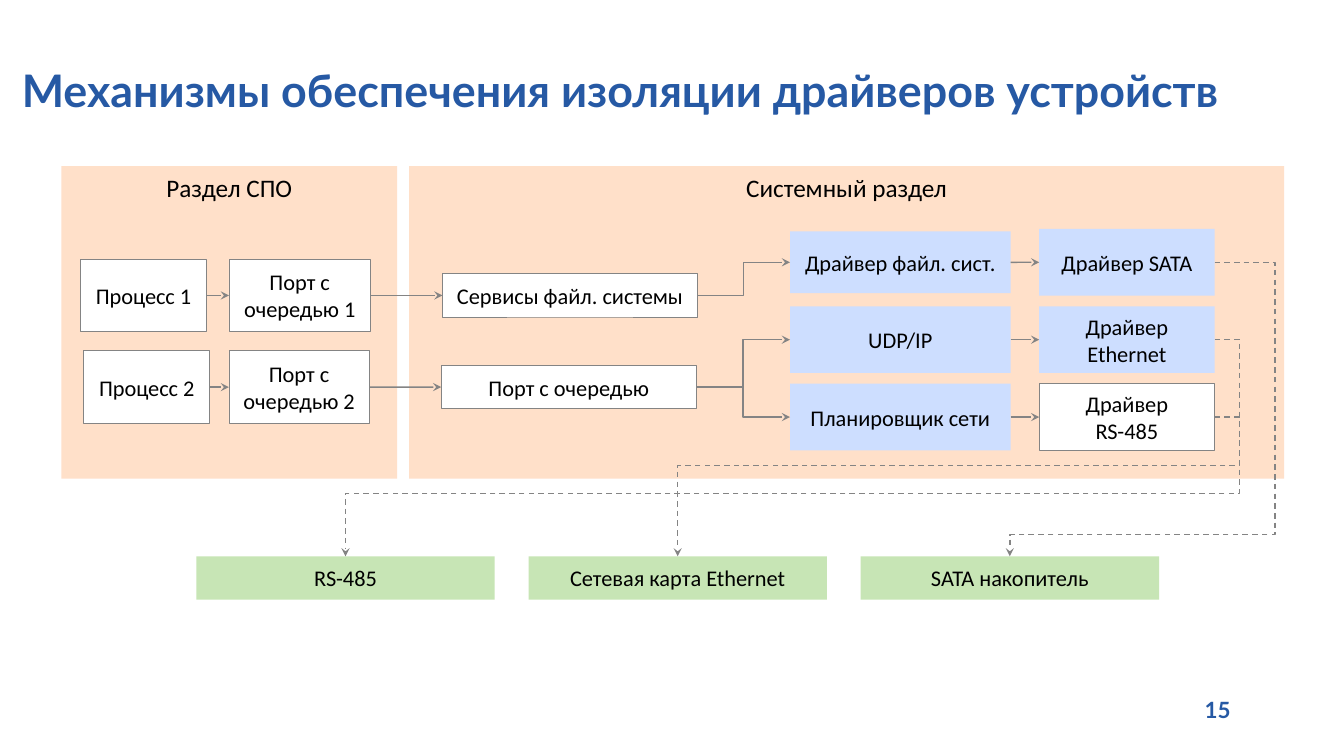
"""Build the slide on isolating device drivers between system partitions."""
from dataclasses import dataclass

import pptx
import pptx.dml.color
import pptx.enum.dml
import pptx.enum.shapes
import pptx.enum.text
import pptx.oxml
import pptx.oxml.ns
import pptx.util
from pptx.util import Cm

COLOURS = {
    "heading": "2659A4",
    "text": "000000",
    "partition": "FFCFAB",
    "plain": "FFFFFF",
    "driver": "CDDEFF",
    "device": "C7E5B5",
    "line": "848484",
}
ALIGN = pptx.enum.text.PP_ALIGN
ANCHOR = pptx.enum.text.MSO_ANCHOR
TOP, LEFT, BOTTOM, RIGHT = range(4)


@dataclass(frozen=True)
class Block:
    text: str
    left: float
    top: float
    width: float
    height: float
    role: str = "plain"


@dataclass(frozen=True)
class Link:
    source: str
    target: str
    bends: tuple[float, ...] = ()
    entry: int = LEFT
    dashed: bool = False


PARTITIONS = [
    Block("Раздел СПО", 1.55, 4.19, 8.46, 7.87, "partition"),
    Block("Системный раздел", 10.31, 4.19, 22.05, 7.87, "partition"),
]
PROCESS_ROWS = [6.53, 8.84]
DRIVER_ROWS = [5.77 + 1.95 * row for row in range(3)]
DEVICE_COLUMNS = [4.95 + 8.37 * column for column in range(3)]

BLOCKS = {
    "process1": Block("Процесс 1", 2.03, PROCESS_ROWS[0], 3.18, 1.83),
    "process2": Block("Процесс 2", 2.11, PROCESS_ROWS[1], 3.18, 1.83),
    "port1": Block("Порт с\nочередью 1", 5.77, PROCESS_ROWS[0], 3.57, 1.83),
    "port2": Block("Порт с\nочередью 2", 5.77, PROCESS_ROWS[1], 3.54, 1.83),
    "file_services": Block("Сервисы файл. системы", 11.15, PROCESS_ROWS[0] + 0.37, 6.43, 1.09),
    "queue_port": Block("Порт с очередью", 11.12, PROCESS_ROWS[1] + 0.37, 6.43, 1.09),
    "file_driver": Block("Драйвер файл. сист.", 19.91, 5.83, 5.56, 1.56, "driver"),
    "udp_ip": Block("UDP/IP", 19.91, DRIVER_ROWS[1], 5.56, 1.68, "driver"),
    "scheduler": Block("Планировщик сети", 19.91, DRIVER_ROWS[2], 5.56, 1.68, "driver"),
    "sata_driver": Block("Драйвер SATA", 26.19, DRIVER_ROWS[0], 4.42, 1.68, "driver"),
    "ethernet_driver": Block("Драйвер Ethernet", 26.19, DRIVER_ROWS[1], 4.42, 1.68, "driver"),
    "rs485_driver": Block("Драйвер\nRS-485", 26.19, DRIVER_ROWS[2], 4.42, 1.68),
    "rs485": Block("RS-485", DEVICE_COLUMNS[0], 14.02, 7.52, 1.09, "device"),
    "network_card": Block("Сетевая карта Ethernet", DEVICE_COLUMNS[1], 14.02, 7.52, 1.09, "device"),
    "sata_disk": Block("SATA накопитель", DEVICE_COLUMNS[2], 14.02, 7.52, 1.09, "device"),
}

LINKS = [
    Link("process1", "port1"),
    Link("process2", "port2"),
    Link("port1", "file_services"),
    Link("port2", "queue_port"),
    Link("file_services", "file_driver", (0.5,)),
    Link("queue_port", "udp_ip", (0.5,)),
    Link("queue_port", "scheduler", (0.5,)),
    Link("file_driver", "sata_driver"),
    Link("udp_ip", "ethernet_driver"),
    Link("scheduler", "rs485_driver"),
    Link("sata_driver", "sata_disk", (-0.295, 0.926), TOP, True),
    Link("ethernet_driver", "network_card", (-0.047, 0.58), TOP, True),
    Link("rs485_driver", "rs485", (-0.029, 0.547), TOP, True),
]


def colour(name: str) -> pptx.dml.color.RGBColor:
    """Return the named palette colour."""
    return pptx.dml.color.RGBColor.from_string(COLOURS[name])


def write(frame, text: str, size: float, font: str = "Calibri", ink: str = "text",
          align=ALIGN.CENTER, anchor=ANCHOR.MIDDLE, inset: float = 0.13):
    """Fill a text frame run by run and return its paragraph."""
    frame.word_wrap = True
    frame.vertical_anchor = anchor
    frame.margin_left = frame.margin_right = Cm(2 * inset)
    frame.margin_top = frame.margin_bottom = Cm(inset)
    paragraph = frame.paragraphs[0]
    paragraph.alignment = align
    for index, line in enumerate(text.split("\n")):
        if index:
            paragraph.add_line_break()
        run = paragraph.add_run()
        run.text = line
        run.font.name = font
        run.font.size = pptx.util.Pt(size)
        run.font.bold = ink == "heading"
        run.font.color.rgb = colour(ink)
    return paragraph


def draw_block(slide, block: Block):
    """Draw a labelled rectangle and return its shape."""
    shape = slide.shapes.add_shape(
        pptx.enum.shapes.MSO_SHAPE.RECTANGLE,
        Cm(block.left), Cm(block.top), Cm(block.width), Cm(block.height))
    shape.shadow.inherit = False
    shape.fill.solid()
    shape.fill.fore_color.rgb = colour(block.role)
    if block.role == "plain":
        shape.line.color.rgb = colour("line")
        shape.line.width = pptx.util.Pt(0.5)
    else:
        shape.line.fill.background()
    if block.role == "partition":
        tint = shape.fill._xPr.find(".//" + pptx.oxml.ns.qn("a:srgbClr"))
        pptx.oxml.ns.qn("a:alpha")
        add_child(tint, "alpha", val="64000")
        write(shape.text_frame, block.text, 18, anchor=ANCHOR.TOP, inset=0.15)
    else:
        write(shape.text_frame, block.text, 16)
    return shape


def add_child(parent, tag: str, **attributes: str) -> None:
    """Append a DrawingML element to its parent."""
    child = pptx.oxml.parse_xml(f"<a:{tag} {pptx.oxml.ns.nsdecls('a')}/>")
    for key, value in attributes.items():
        child.set(key, value)
    parent.append(child)


def draw_link(slide, link: Link, shapes: dict) -> None:
    """Draw an arrow glued to the two blocks it joins."""
    kinds = pptx.enum.shapes.MSO_CONNECTOR
    arrow = slide.shapes.add_connector(
        kinds.ELBOW if link.bends else kinds.STRAIGHT, 0, 0, 0, 0)
    arrow.begin_connect(shapes[link.source], RIGHT)
    arrow.end_connect(shapes[link.target], link.entry)
    arrow.line.color.rgb = colour("line")
    arrow.line.width = pptx.util.Pt(1)
    if link.dashed:
        arrow.line.dash_style = pptx.enum.dml.MSO_LINE.DASH
    properties = arrow._element.spPr
    add_child(arrow.line._get_or_add_ln(), "tailEnd", type="stealth")
    add_child(properties, "effectLst")
    if link.bends:
        geometry = properties.find(pptx.oxml.ns.qn("a:prstGeom"))
        geometry.set("prst", f"bentConnector{len(link.bends) + 2}")
        guides = geometry.find(pptx.oxml.ns.qn("a:avLst"))
        for number, bend in enumerate(link.bends, 1):
            add_child(guides, "gd", name=f"adj{number}", fmla=f"val {round(bend * 100000)}")


def main() -> None:
    """Compose the slide and save it."""
    deck = pptx.Presentation()
    deck.slide_width, deck.slide_height = Cm(33.87), Cm(19.05)
    slide = deck.slides.add_slide(deck.slide_layouts[6])
    heading = slide.shapes.add_textbox(Cm(0.41), Cm(0.51), Cm(33.45), Cm(3.68))
    paragraph = write(heading.text_frame, "Механизмы обеспечения изоляции драйверов устройств",
                      32, "Lato", "heading", ALIGN.LEFT, inset=0.07)
    paragraph.line_spacing = 0.9
    for partition in PARTITIONS:
        draw_block(slide, partition)
    shapes = {key: draw_block(slide, block) for key, block in BLOCKS.items()}
    for link in LINKS:
        draw_link(slide, link, shapes)
    page_number = slide.shapes.add_textbox(Cm(25.55), Cm(17.42), Cm(5.72), Cm(0.94))
    write(page_number.text_frame, "15", 16, "Lato", "heading", ALIGN.RIGHT)


    deck.save("out.pptx")


if __name__ == "__main__":
    main()
